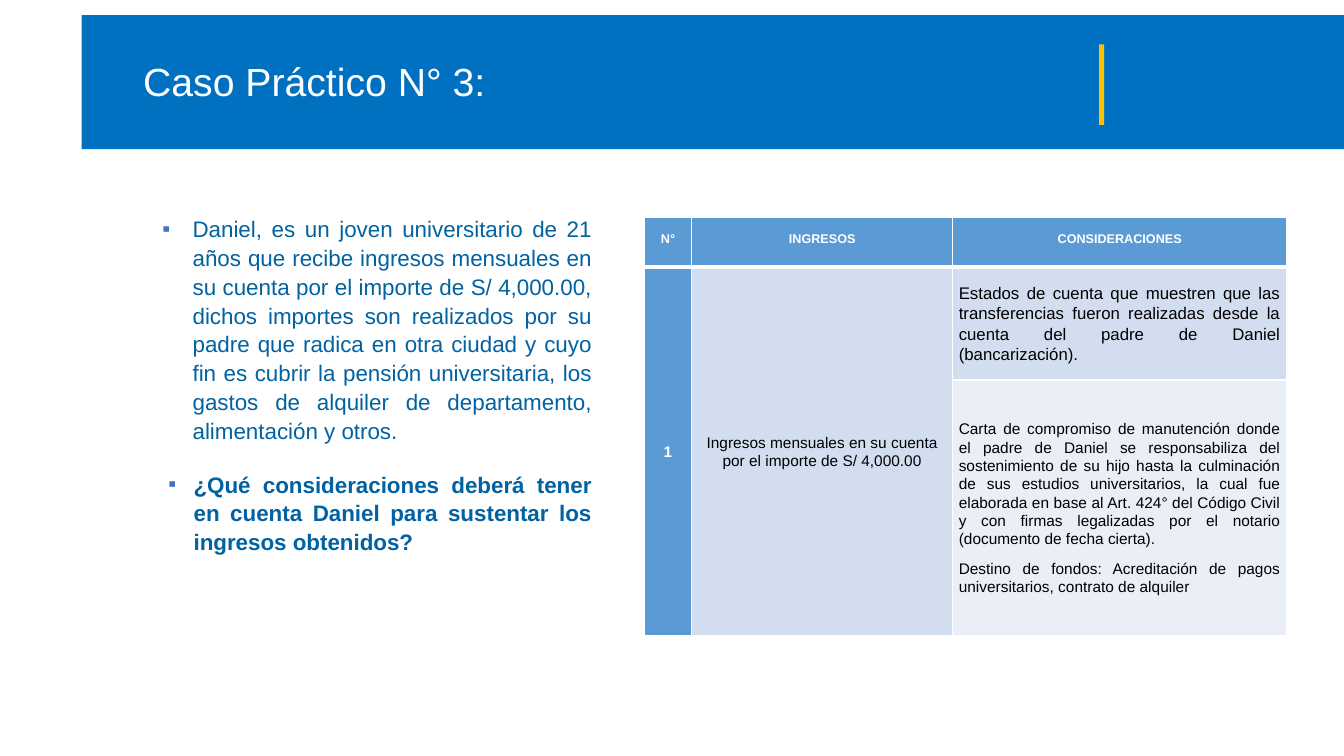
from lxml import etree
from pptx import Presentation
from pptx.dml.color import RGBColor
from pptx.enum import shapes, text
from pptx.oxml import ns
from pptx.util import Inches, Pt

WHITE = RGBColor(0xFF, 0xFF, 0xFF)
BLACK = RGBColor(0, 0, 0)
BANNER_BLUE = RGBColor(0x00, 0x70, 0xC0)
ACCENT_YELLOW = RGBColor(0xFF, 0xC0, 0x00)
BODY_BLUE = RGBColor(0x00, 0x62, 0xA2)
BULLET_BLUE = RGBColor(0x44, 0x72, 0xC4)
HEADER_BLUE = RGBColor(0x5B, 0x9B, 0xD5)
BAND_DARK = RGBColor(0xD2, 0xDE, 0xEF)
BAND_LIGHT = RGBColor(0xEA, 0xEF, 0xF7)

LEFT, CENTER, JUSTIFY = (text.PP_ALIGN.LEFT, text.PP_ALIGN.CENTER,
                         text.PP_ALIGN.JUSTIFY)
TOP, MIDDLE = text.MSO_ANCHOR.TOP, text.MSO_ANCHOR.MIDDLE

CASE = [
    ("Daniel, es un joven universitario de 21 años que recibe ingresos mensuales "
     "en su cuenta por el importe de S/ 4,000.00, dichos importes son realizados "
     "por su padre que radica en otra ciudad y cuyo fin es cubrir la pensión "
     "universitaria, los gastos de alquiler de departamento, alimentación y otros.",
     0.49, -0.3, False),
    ("¿Qué consideraciones deberá tener en cuenta Daniel para sustentar los "
     "ingresos obtenidos?", 0.5, -0.25, True),
]
HEADINGS = ["N°", "INGRESOS", "CONSIDERACIONES"]
INCOME = "Ingresos mensuales en su cuenta por el importe de S/ 4,000.00"
STATEMENTS = ("Estados de cuenta que muestren que las transferencias fueron "
              "realizadas desde la cuenta del padre de Daniel (bancarización).")
COMMITMENT = [
    "Carta de compromiso de manutención donde el padre de Daniel se responsabiliza "
    "del sostenimiento de su hijo hasta la culminación de sus estudios "
    "universitarios, la cual fue elaborada en base al Art. 424° del Código Civil y "
    "con firmas legalizadas por el notario (documento de fecha cierta).",
    "Destino de fondos: Acreditación de pagos universitarios, contrato de alquiler",
]


class CaseSlide:
    def __init__(self, prs, font="Arial"):
        self.font = font
        self.slide = prs.slides.add_slide(prs.slide_layouts[1])

    def place(self, shape, left, top, width, height):
        shape.left, shape.top = Inches(left), Inches(top)
        shape.width, shape.height = Inches(width), Inches(height)

    def set_paragraph(self, paragraph, wording, size, color, bold=False,
                      align=LEFT, spacing=1.07, before=0, after=8):
        paragraph.text = wording
        paragraph.alignment = align
        paragraph.line_spacing = spacing
        paragraph.space_before, paragraph.space_after = Pt(before), Pt(after)
        for run in paragraph.runs:
            run.font.name, run.font.size = self.font, Pt(size)
            run.font.bold, run.font.color.rgb = bold, color

    def bar(self, color, *box):
        """Add a plain rectangle behind the placeholders."""
        bar = self.slide.shapes.add_shape(
            shapes.MSO_SHAPE.RECTANGLE, *map(Inches, box))
        bar.shadow.inherit = False
        bar.fill.solid()
        bar.fill.fore_color.rgb = color
        bar.line.fill.background()
        title = self.slide.shapes.title.element
        title.addprevious(bar.element)

    def title(self, wording, *box):
        title = self.slide.shapes.title
        self.place(title, *box)
        frame = title.text_frame
        frame.auto_size = text.MSO_AUTO_SIZE.NONE
        frame.vertical_anchor = MIDDLE
        self.set_paragraph(frame.paragraphs[0], wording, 28, WHITE,
                           spacing=0.9, after=0)

    def bullet(self, paragraph, margin, indent):
        props = paragraph._p.get_or_add_pPr()
        props.set("marL", str(Inches(margin)))
        props.set("indent", str(Inches(indent)))
        color = etree.SubElement(props, ns.qn("a:buClr"))
        etree.SubElement(color, ns.qn("a:srgbClr"), val=str(BULLET_BLUE))
        etree.SubElement(props, ns.qn("a:buFont"), typeface=self.font)
        etree.SubElement(props, ns.qn("a:buChar"), char="▪")

    def body(self, items, *box):
        body = self.slide.placeholders[1]
        self.place(body, *box)
        frame = body.text_frame
        frame.auto_size = text.MSO_AUTO_SIZE.NONE
        for number, (wording, margin, indent, bold) in enumerate(items):
            paragraph = frame.add_paragraph() if number else frame.paragraphs[0]
            self.set_paragraph(paragraph, wording, 16, BODY_BLUE, bold, JUSTIFY,
                               before=10 if number else 0)
            self.bullet(paragraph, margin, indent)

    def borders(self, cell, top, bottom):
        props = cell._tc.get_or_add_tcPr()
        widths = {"L": 1, "R": 1, "T": top, "B": bottom}
        for index, (side, width) in enumerate(widths.items()):
            line = etree.Element(ns.qn(f"a:ln{side}"), w=str(Pt(width)))
            fill = etree.SubElement(line, ns.qn("a:solidFill"))
            etree.SubElement(fill, ns.qn("a:srgbClr"), val=str(WHITE))
            props.insert(index, line)

    def table(self, left, top, columns, rows):
        table = self.slide.shapes.add_table(
            len(rows), len(columns), Inches(left), Inches(top),
            Inches(sum(columns)), Inches(sum(rows))).table
        for column, width in zip(table.columns, columns):
            column.width = Inches(width)
        for number, (row, height) in enumerate(zip(table.rows, rows)):
            row.height = Inches(height)
            for cell in row.cells:
                self.borders(cell, 3 if number == 1 else 1,
                             3 if number == 0 else 1)
        return table

    def cell(self, cell, wordings, fill, size, color=BLACK, anchor=MIDDLE, **style):
        cell.fill.solid()
        cell.fill.fore_color.rgb = fill
        cell.vertical_anchor = anchor
        cell.margin_left = cell.margin_right = Inches(0.06)
        cell.margin_top = cell.margin_bottom = 0
        frame = cell.text_frame
        for number, wording in enumerate(wordings):
            paragraph = frame.add_paragraph() if number else frame.paragraphs[0]
            self.set_paragraph(paragraph, wording, size, color, **style)


def main():
    prs = Presentation()
    prs.slide_width, prs.slide_height = Inches(13.33), Inches(7.5)
    case = CaseSlide(prs)
    case.bar(BANNER_BLUE, 0.81, 0.15, 12.52, 1.33)
    case.bar(ACCENT_YELLOW, 10.9, 0.44, 0.05, 0.8)
    case.title("Caso Práctico N° 3:", 1.32, 0.36, 6.1, 0.95)
    case.body(CASE, 1.32, 2.07, 4.65, 4.84)

    evidence = case.table(6.39, 2.16, [0.47, 2.59, 3.31], [0.49, 1.12, 2.54])
    for column, heading in enumerate(HEADINGS):
        case.cell(evidence.cell(0, column), [heading], HEADER_BLUE, 9, WHITE, TOP,
                  bold=True, align=CENTER, spacing=2)
    for column in (0, 1):
        evidence.cell(1, column).merge(evidence.cell(2, column))
    case.cell(evidence.cell(1, 0), ["1"], HEADER_BLUE, 11, WHITE,
              bold=True, align=CENTER)
    case.cell(evidence.cell(1, 1), [INCOME], BAND_DARK, 11, align=CENTER)
    case.cell(evidence.cell(1, 2), [STATEMENTS], BAND_DARK, 12, align=JUSTIFY)
    case.cell(evidence.cell(2, 2), COMMITMENT, BAND_LIGHT, 11, align=JUSTIFY)
    prs.save("out.pptx")


if __name__ == "__main__":
    main()
